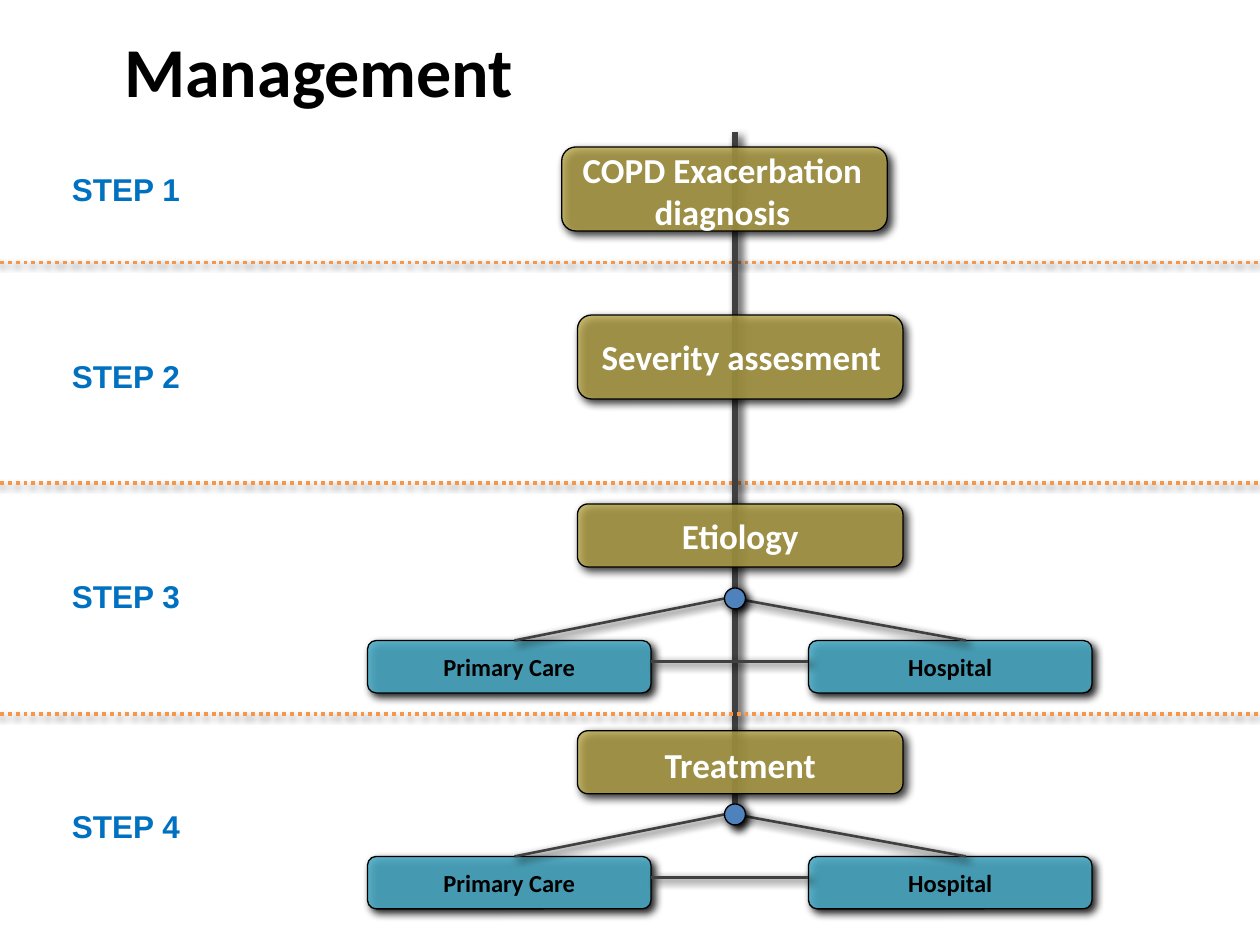
from lxml import etree
from pptx import Presentation, util as u
from pptx.dml.color import RGBColor
from pptx.enum import dml, shapes, text
from pptx.oxml.ns import qn

Pt = u.Pt
rgb = RGBColor.from_string


def style(item, hue, width, alpha=100, blur=5, dist=2.83, angle=45):
    item.line.color.rgb = rgb(hue)
    item.line.width = Pt(width)
    fx = etree.SubElement(item._element.spPr, qn("a:effectLst"))
    shade = etree.SubElement(fx, qn("a:outerShdw"), blurRad=str(Pt(blur)),
                             dist=str(Pt(dist)), dir=str(angle * 60000),
                             algn="ctr", rotWithShape="0")
    black = etree.SubElement(shade, qn("a:srgbClr"), val="000000")
    etree.SubElement(black, qn("a:alpha"), val=str(alpha * 1000))


def label(words, x, y, w, h, size, hue, font="Calibri", side=6.48, edge=3.24,
          anchor=text.MSO_ANCHOR.BOTTOM, align=text.PP_ALIGN.CENTER):
    frame = pane.add_textbox(Pt(x), Pt(y), Pt(w), Pt(h)).text_frame
    frame.word_wrap = True
    frame.auto_size = text.MSO_AUTO_SIZE.SHAPE_TO_FIT_TEXT
    frame.vertical_anchor = anchor
    frame.margin_left = frame.margin_right = Pt(side)
    frame.margin_top = frame.margin_bottom = Pt(edge)
    para = frame.paragraphs[0]
    para.alignment = align
    run = para.add_run()
    run.text = words
    run.font.name = font
    run.font.size = Pt(size)
    run.font.bold = True
    run.font.color.rgb = rgb(hue)


deck = Presentation()
deck.slide_width, deck.slide_height = Pt(720), Pt(540)
pane = deck.slides.add_slide(deck.slide_layouts[6]).shapes

label("Management", 64, 11.6, 257, 56, 40, "000000", side=7.2, edge=3.6,
      anchor=text.MSO_ANCHOR.MIDDLE, align=text.PP_ALIGN.LEFT)

for num, y in enumerate([93.6, 200.2, 326.2, 457.9], 1):
    label(f"STEP {num}", 3.6, y, 136.8, 28.8, 18, "0070C0", "Arial",
          7.2, 3.6, text.MSO_ANCHOR.TOP)

straight = shapes.MSO_CONNECTOR.STRAIGHT
for y in [150, 276, None, 408]:
    if y is None:
        trunk = pane.add_connector(straight, Pt(420), Pt(75.6), Pt(420), Pt(471.6))
        style(trunk, "404040", 3)
        continue
    rule = pane.add_connector(straight, Pt(0), Pt(y), Pt(720), Pt(y))
    style(rule, "F79646", 2.25, 38, 3.15, 1.57, 90)
    rule.line.dash_style = dml.MSO_LINE.ROUND_DOT

gold, teal = ("BBAA4A", 77, 20, "FFFFFF"), ("4BACC6", 88, 14, "000000")
boxes = [
    ("COPD Exacerbation diagnosis", gold, 321, 84, 186, 48, 321, 81.4, 183.6, 54.7),
    ("Severity assesment", gold, 330, 180, 186, 48, 334.8, 188, 177.8, 31),
    ("Etiology", gold, 330, 288, 186, 36, 338.4, 290.2, 169.2, 31),
    ("Treatment", gold, 330, 417.6, 186, 36, 338.4, 421.2, 169.2, 31),
]
tops = [366, 489.4]
for top in tops:
    for name, x in [("Primary Care", 210), ("Hospital", 462)]:
        boxes.append((name, teal, x, top, 162, 30, x + 7.2, top + 3.4, 147.6, 23))

for name, kind, x, y, w, h, *area in boxes:
    hue, alpha, size, ink = kind
    box = pane.add_shape(shapes.MSO_SHAPE.ROUNDED_RECTANGLE, Pt(x), Pt(y), Pt(w), Pt(h))
    box.fill.solid()
    box.fill.fore_color.rgb = rgb(hue)
    tint = box._element.spPr.find(".//" + qn("a:srgbClr"))
    etree.SubElement(tint, qn("a:alpha"), val=str(alpha * 1000))
    style(box, "000000", 0.75)
    label(name, *area, size, ink)

for top in tops:
    for x1, dy1, x2, dy2 in [(420, -24, 552, 0), (294, 0, 414, -24), (372, 12, 462, 12)]:
        link = pane.add_connector(straight, Pt(x1), Pt(top + dy1), Pt(x2), Pt(top + dy2))
        style(link, "404040", 1.5)
    dot = pane.add_shape(shapes.MSO_SHAPE.OVAL, Pt(414), Pt(top - 30), Pt(12), Pt(12))
    dot.fill.solid()
    dot.fill.fore_color.rgb = rgb("4F81BD")
    style(dot, "000000", 0.75)

deck.save("out.pptx")
